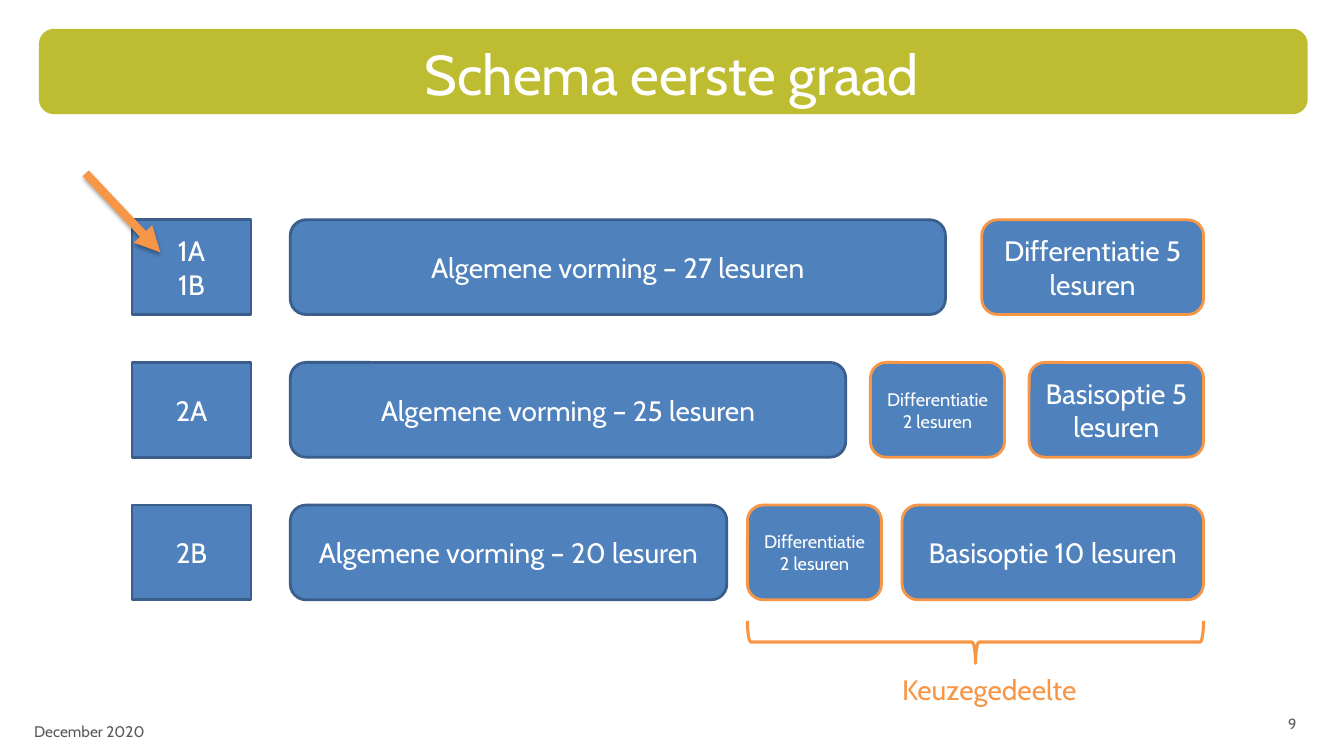
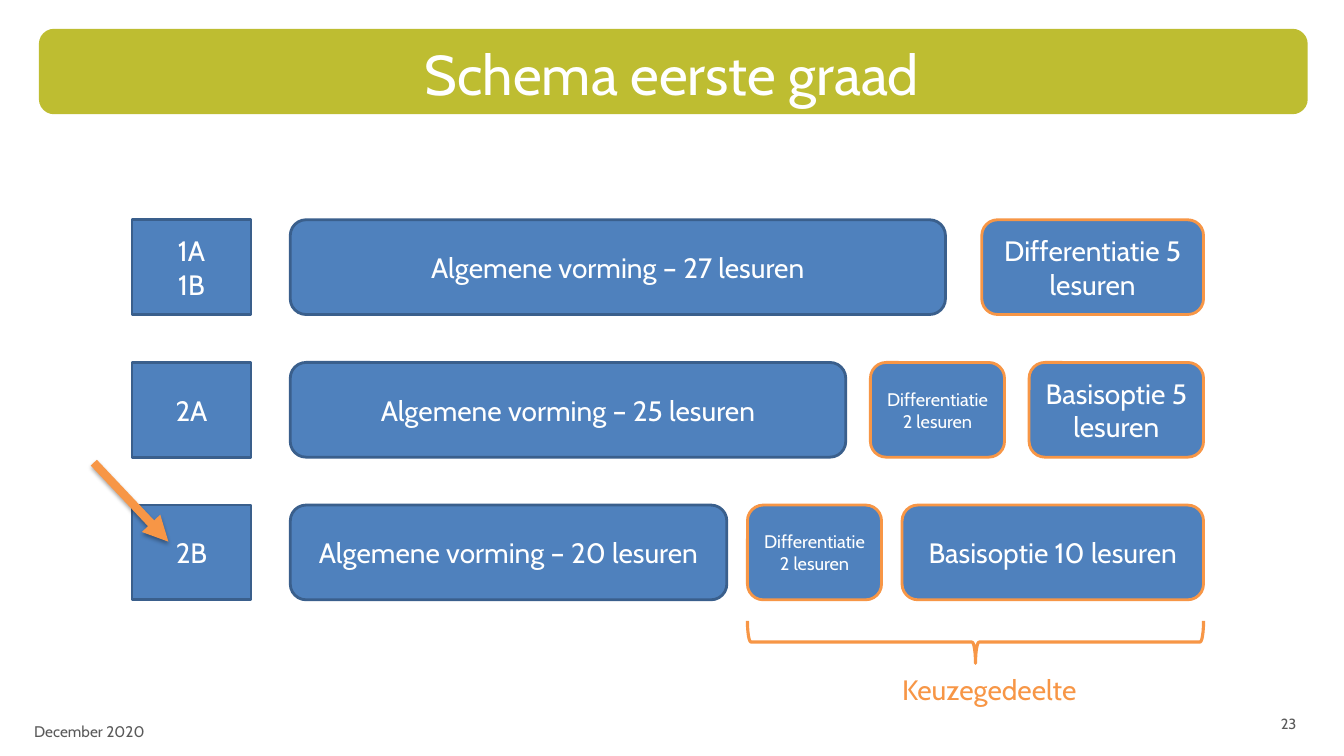
from dataclasses import dataclass

from lxml import etree
from pptx import Presentation
from pptx.dml.color import RGBColor
from pptx.enum.shapes import MSO_CONNECTOR as CONNECTOR, MSO_SHAPE as SHAPE
from pptx.enum.text import MSO_ANCHOR as ANCHOR, PP_ALIGN as ALIGN
from pptx.oxml import parse_xml
from pptx.oxml.ns import nsdecls, qn
from pptx.util import Inches, Pt

SLIDE_W, SLIDE_H = Inches(13.33), Inches(7.5)


@dataclass(frozen=True)
class Theme:
    font: str = "Cabin"
    band: str = "BEBD31"
    block: str = "4F81BD"
    block_edge: str = "3A5F8C"
    accent: str = "F79646"
    white: str = "FFFFFF"
    muted: str = "595959"
    title_size: float = 40
    body_size: float = 20
    small_size: float = 13
    date_size: float = 11
    number_size: float = 10.5
    edge_width: float = 2
    brace_width: float = 2.25
    arrow_width: float = 6


THEME = Theme()

# All lengths below are percentages of the slide's width or height.
LEVEL_LEFT, LEVEL_WIDTH = 9.83, 8.85
BLOCKS_LEFT, BLOCKS_RIGHT = 21.6, 89.55
ROW_TOP, ROW_PITCH, ROW_HEIGHT = 29.07, 18.87, 12.53
ARROW_RUN, ARROW_DROP = 5.55, 10.45


@dataclass(frozen=True)
class Block:
    text: str
    width: float
    optional: bool = True
    size: float = THEME.body_size


def general(hours, width):
    return Block(f"Algemene vorming – {hours} lesuren", width, optional=False)


SHORT_BLOCK = Block("Differentiatie\n2 lesuren", 9.98, size=THEME.small_size)
ROWS = [
    ("1A\n1B", [general(27, 48.75), Block("Differentiatie 5 lesuren", 16.5)]),
    ("2A", [general(25, 41.33), SHORT_BLOCK, Block("Basisoptie 5 lesuren", 12.98)]),
    ("2B", [general(20, 32.48), SHORT_BLOCK, Block("Basisoptie 10 lesuren", 22.43)]),
]


def across(share):
    return round(SLIDE_W * share / 100)


def down(share):
    return round(SLIDE_H * share / 100)


def area(left, top, width, height):
    return across(left), down(top), across(width), down(height)


def write(shape, text, size, color=THEME.white, align=ALIGN.CENTER, anchor=ANCHOR.MIDDLE):
    frame = shape.text_frame
    for name, value in {"word_wrap": True, "vertical_anchor": anchor}.items():
        setattr(frame, name, value)
    frame.text = text
    for para in frame.paragraphs:
        para.alignment = align
        for span in para.runs:
            for name, value in {"name": THEME.font, "size": Pt(size)}.items():
                setattr(span.font, name, value)
            span.font.color.rgb = RGBColor.from_string(color)


def set_line(shape, color, width):
    shape.line.color.rgb = RGBColor.from_string(color)
    shape.line.width = Pt(width)


def add_panel(page, kind, place, fill, edge):
    panel = page.shapes.add_shape(kind, *place)
    panel.shadow.inherit = False
    panel.fill.solid()
    panel.fill.fore_color.rgb = RGBColor.from_string(fill)
    set_line(panel, edge, THEME.edge_width)
    return panel


def add_label(page, place, text, size, color, align=ALIGN.LEFT, anchor=ANCHOR.MIDDLE):
    write(page.shapes.add_textbox(*place), text, size, color, align, anchor)


def add_frame(page, number):
    """Title band, title, date and page number."""
    add_panel(page, SHAPE.ROUNDED_RECTANGLE, area(3, 4, 94.2, 10.93), THEME.band, THEME.band)
    add_label(page, area(5, 4.53, 90, 9.2), "Schema eerste graad", THEME.title_size,
              THEME.white, ALIGN.CENTER, ANCHOR.TOP)
    add_label(page, area(74.1, 93.07, 23.1, 5.33), str(number), THEME.number_size,
              THEME.muted, ALIGN.RIGHT)
    add_label(page, area(1.8, 94.13, 25.58, 5.33), "December 2020", THEME.date_size, THEME.muted)


def add_row(page, top, level, blocks):
    """Draw a level and its evenly spaced blocks; return where the optional part starts."""
    level_place = area(LEVEL_LEFT, top, LEVEL_WIDTH, ROW_HEIGHT)
    level_box = add_panel(page, SHAPE.RECTANGLE, level_place, THEME.block, THEME.block_edge)
    write(level_box, level, THEME.body_size)
    free = BLOCKS_RIGHT - BLOCKS_LEFT - sum(block.width for block in blocks)
    gap = free / (len(blocks) - 1)
    left, optional_lefts = BLOCKS_LEFT, []
    for block in blocks:
        edge = THEME.accent if block.optional else THEME.block_edge
        place = area(left, top, block.width, ROW_HEIGHT)
        box = add_panel(page, SHAPE.ROUNDED_RECTANGLE, place, THEME.block, edge)
        write(box, block.text, block.size)
        if block.optional:
            optional_lefts.append(left)
        left += block.width + gap
    return min(optional_lefts)


def add_brace(page, left, top, width, height):
    """Brace that opens upward: a right brace turned a quarter about its centre."""
    x, y, length, depth = area(left, top, width, height)
    shift = (length - depth) // 2
    brace = page.shapes.add_shape(SHAPE.RIGHT_BRACE, x + shift, y - shift, depth, length)
    brace.rotation = 90
    brace.shadow.inherit = False
    brace.fill.background()
    set_line(brace, THEME.accent, THEME.brace_width)


def add_arrow(page, left, top):
    arrow = page.shapes.add_connector(
        CONNECTOR.STRAIGHT, across(left), down(top),
        across(left + ARROW_RUN), down(top + ARROW_DROP))
    set_line(arrow, THEME.accent, THEME.arrow_width)
    etree.SubElement(arrow.line._get_or_add_ln(), qn("a:tailEnd"), type="triangle")
    arrow._element.spPr.append(parse_xml(
        f'<a:effectLst {nsdecls("a")}>'
        '<a:outerShdw blurRad="40000" dist="23000" dir="5400000" rotWithShape="0">'
        '<a:srgbClr val="000000"><a:alpha val="35000"/></a:srgbClr>'
        '</a:outerShdw></a:effectLst>'))


def add_scheme(deck, number, arrow_start):
    page = deck.slides.add_slide(deck.slide_layouts[6])
    add_frame(page, number)
    for index, (level, blocks) in enumerate(ROWS):
        choice_left = add_row(page, ROW_TOP + index * ROW_PITCH, level, blocks)
    add_brace(page, choice_left, 82.13, BLOCKS_RIGHT - choice_left, 5.6)
    add_label(page, area(66.38, 88.27, 18.9, 5.87), "Keuzegedeelte", THEME.body_size,
              THEME.accent, anchor=ANCHOR.TOP)
    add_arrow(page, *arrow_start)


def main():
    deck = Presentation()
    deck.slide_width, deck.slide_height = SLIDE_W, SLIDE_H
    for number, arrow_start in ((9, (6.38, 22.93)), (23, (6.98, 61.2))):
        add_scheme(deck, number, arrow_start)
    deck.save("out.pptx")


if __name__ == "__main__":
    main()
